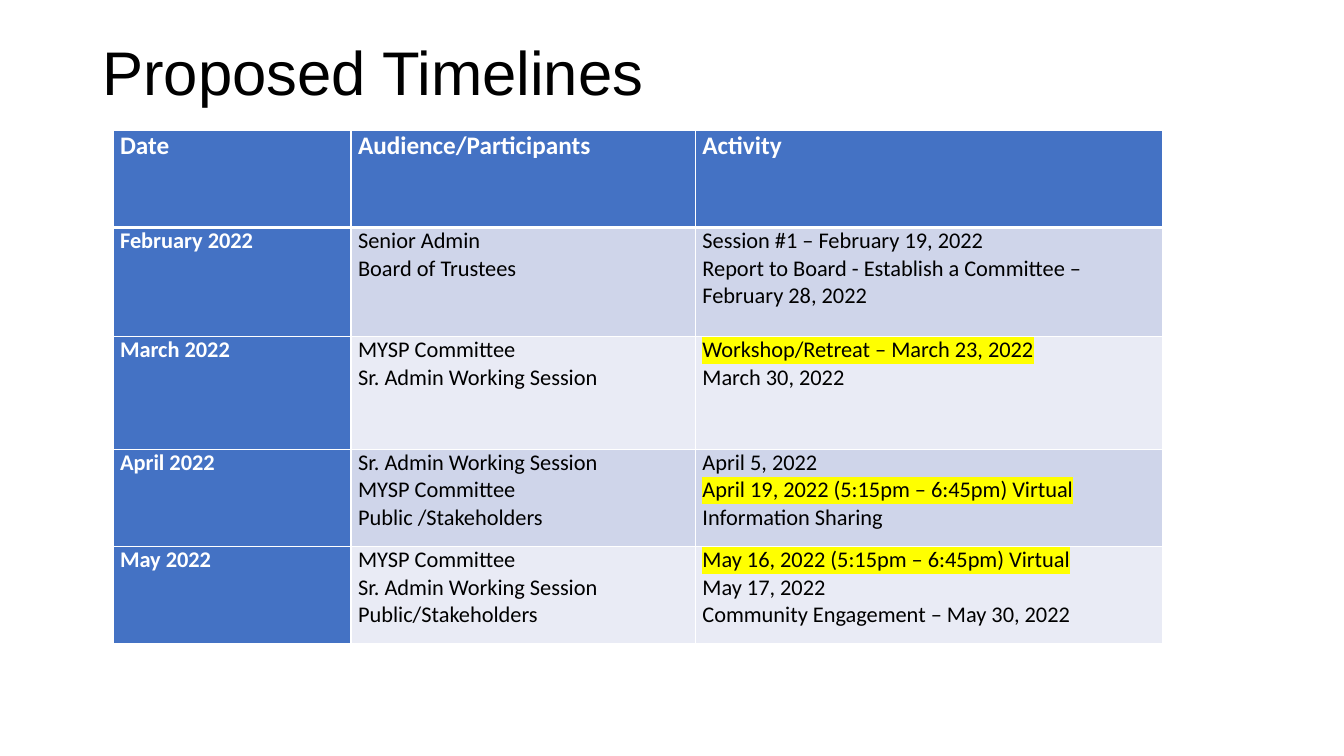
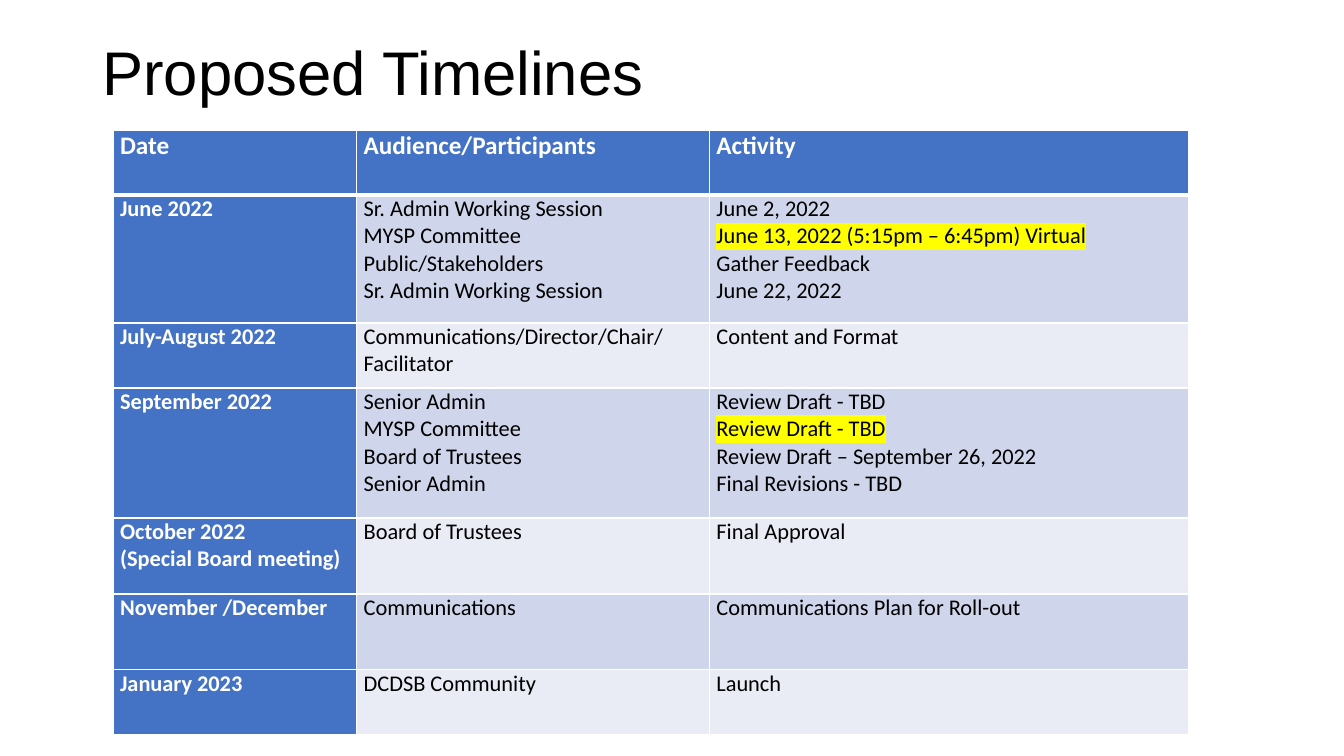
from dataclasses import dataclass

from lxml import etree
from pptx import Presentation
from pptx import util as u
from pptx.dml import color
from pptx.enum import text
from pptx.oxml import ns


@dataclass(frozen=True)
class Theme:
    ink: str = "000000"
    paper: str = "FFFFFF"
    accent: str = "4472C4"
    bands: tuple[str, str] = ("CFD5EA", "E9EBF5")
    marker: str = "FFFF00"
    title_font: str = "Arial"
    table_font: str = "Calibri"
    title_size: float = 44
    header_size: float = 18
    body_size: float = 16
    thin_line: float = 1
    thick_line: float = 3


@dataclass(frozen=True)
class Period:
    height: float
    dates: tuple[str, ...]
    audience: tuple[str, ...]
    activity: tuple[str, ...]
    marked: int | None = None


@dataclass(frozen=True)
class Timeline:
    title_top: float
    column_widths: tuple[float, ...]
    header_height: float
    periods: tuple[Period, ...]


THEME = Theme()
TITLE = "Proposed Timelines"
HEADINGS = ("Date", "Audience/Participants", "Activity")
TABLE_LEFT, TABLE_TOP, CELL_MARGIN = 80.7, 93, 5.1
ADMIN = "Sr. Admin Working Session"
SENIOR = "Senior Admin"
COMMITTEE = "MYSP Committee"
TRUSTEES = "Board of Trustees"
PUBLIC = "Public/Stakeholders"

TIMELINES = (
    Timeline(2, (170, 246, 334), 69.5, (
        Period(77.8, ("February 2022",), (SENIOR, TRUSTEES),
               ("Session #1 – February 19, 2022",
                "Report to Board - Establish a Committee – February 28, 2022")),
        Period(80.6, ("March 2022",), (COMMITTEE, ADMIN),
               ("Workshop/Retreat – March 23, 2022", "March 30, 2022"), marked=0),
        Period(69.5, ("April 2022",), (ADMIN, COMMITTEE, "Public /Stakeholders"),
               ("April 5, 2022", "April 19, 2022 (5:15pm – 6:45pm) Virtual",
                "Information Sharing"), marked=1),
        Period(69.5, ("May 2022",), (COMMITTEE, ADMIN, PUBLIC),
               ("May 16, 2022 (5:15pm – 6:45pm) Virtual", "May 17, 2022",
                "Community Engagement – May 30, 2022"), marked=0),
    )),
    Timeline(1.8, (174, 252, 342), 46.4, (
        Period(91.4, ("June 2022",), (ADMIN, COMMITTEE, PUBLIC, ADMIN),
               ("June 2, 2022", "June 13, 2022 (5:15pm – 6:45pm) Virtual",
                "Gather Feedback", "June 22, 2022"), marked=1),
        Period(46.4, ("July-August 2022",),
               ("Communications/Director/Chair/", "Facilitator"),
               ("Content and Format",)),
        Period(92.9, ("September 2022",), (SENIOR, COMMITTEE, TRUSTEES, SENIOR),
               ("Review Draft - TBD", "Review Draft - TBD",
                "Review Draft – September 26, 2022", "Final Revisions - TBD"), marked=1),
        Period(54.2, ("October 2022", "(Special Board meeting)"), (TRUSTEES,),
               ("Final Approval",)),
        Period(54.2, ("November /December",), ("Communications",),
               ("Communications Plan for Roll-out",)),
        Period(46.4, ("January 2023",), ("DCDSB Community",), ("Launch",)),
    )),
)


def rgb(value: str) -> color.RGBColor:
    return color.RGBColor.from_string(value)


def add_span(para, words: str, *, size: float, font: str, ink: str,
             bold: bool = False, marker: str | None = None) -> None:
    span = para.add_run()
    span.text = words
    span.font.size = u.Pt(size)
    span.font.bold = bold
    span.font.color.rgb = rgb(ink)
    span.font.name = font
    if marker:
        highlight = etree.Element(ns.qn("a:highlight"))
        etree.SubElement(highlight, ns.qn("a:srgbClr"), val=marker)
        span.font._element.find(ns.qn("a:latin")).addprevious(highlight)


def add_borders(cell, **widths: float) -> None:
    properties = cell._tc.get_or_add_tcPr()
    for side in "LRTB":
        width = u.Pt(widths.get(side, THEME.thin_line))
        line = etree.SubElement(properties, ns.qn(f"a:ln{side}"), w=str(width))
        fill = etree.SubElement(line, ns.qn("a:solidFill"))
        etree.SubElement(fill, ns.qn("a:srgbClr"), val=THEME.paper)


def fill_cell(cell, lines: tuple[str, ...], *, fill: str, size: float, ink: str,
              bold: bool, marked: int | None = None) -> None:
    cell.margin_left = cell.margin_right = u.Pt(CELL_MARGIN)
    cell.margin_top = cell.margin_bottom = 0
    cell.vertical_anchor = text.MSO_ANCHOR.TOP
    cell.fill.solid()
    cell.fill.fore_color.rgb = rgb(fill)
    for index, words in enumerate(lines):
        para = cell.text_frame.paragraphs[0] if index == 0 else cell.text_frame.add_paragraph()
        add_span(para, words, size=size, font=THEME.table_font, ink=ink, bold=bold,
                 marker=THEME.marker if index == marked else None)


def set_title(page, top: float) -> None:
    box = page.shapes.title
    box.left, box.top, box.width, box.height = map(u.Pt, (66, top, 828, 104.4))
    frame = box.text_frame
    frame.auto_size = text.MSO_AUTO_SIZE.NONE
    frame.vertical_anchor = text.MSO_ANCHOR.MIDDLE
    para = frame.paragraphs[0]
    para.alignment = text.PP_ALIGN.LEFT
    para.line_spacing = 0.9
    add_span(para, TITLE, size=THEME.title_size, font=THEME.title_font, ink=THEME.ink)


def add_timeline(page, timeline: Timeline) -> None:
    heights = (timeline.header_height, *(period.height for period in timeline.periods))
    widths = timeline.column_widths
    table = page.shapes.add_table(
        len(heights), len(widths), u.Pt(TABLE_LEFT), u.Pt(TABLE_TOP),
        u.Pt(sum(widths)), u.Pt(sum(heights))).table
    table.first_col = True
    for column, width in zip(table.columns, widths):
        column.width = u.Pt(width)
    for row, height in zip(table.rows, heights):
        row.height = u.Pt(height)
    for cell, heading in zip(table.rows[0].cells, HEADINGS):
        add_borders(cell, B=THEME.thick_line)
        fill_cell(cell, (heading,), fill=THEME.accent, size=THEME.header_size,
                  ink=THEME.paper, bold=True)
    for index, period in enumerate(timeline.periods):
        columns = (period.dates, period.audience, period.activity)
        for column, lines in enumerate(columns):
            is_date = column == 0
            cell = table.cell(index + 1, column)
            add_borders(cell, T=THEME.thick_line if index == 0 else THEME.thin_line)
            fill_cell(cell, lines, size=THEME.body_size, bold=is_date,
                      fill=THEME.accent if is_date else THEME.bands[index % 2],
                      ink=THEME.paper if is_date else THEME.ink,
                      marked=period.marked if column == 2 else None)


def main() -> None:
    deck = Presentation()
    deck.slide_width, deck.slide_height = u.Pt(960), u.Pt(540)
    title_only = deck.slide_layouts.get_by_name("Title Only")
    for timeline in TIMELINES:
        page = deck.slides.add_slide(title_only)
        set_title(page, timeline.title_top)
        add_timeline(page, timeline)
    deck.save("out.pptx")


if __name__ == "__main__":
    main()
